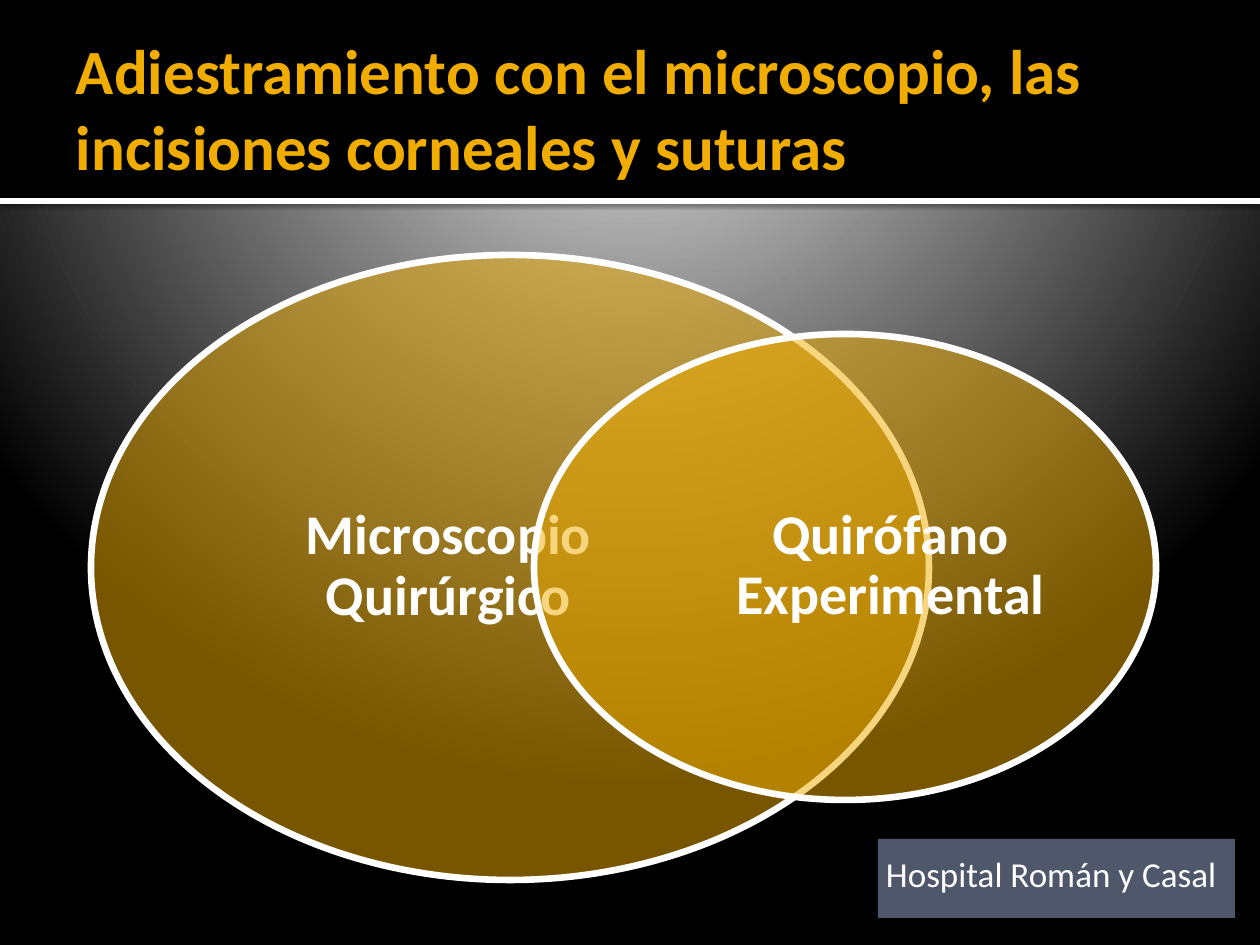
from dataclasses import dataclass

from pptx import Presentation
from pptx.dml.color import RGBColor
from pptx.enum.shapes import MSO_SHAPE as Preset
from pptx.enum.text import MSO_ANCHOR as Anchor, PP_ALIGN as Align
from pptx.oxml import parse_xml
from pptx.oxml.ns import nsdecls
from pptx.util import Emu, Pt

EMU_PER_PX = 914400 / 126
WHITE, BLACK, GOLD, SLATE = "FFFFFF", "000000", "F0AD00", "4F576A"


@dataclass(frozen=True)
class Frame:
    """A rectangle in px."""
    left: int
    top: int
    width: int
    height: int


@dataclass(frozen=True)
class VennSet:
    """An ellipse of the diagram with its label."""
    label: str
    ellipse: Frame
    label_frame: Frame


VENN_SETS = (
    VennSet("Microscopio Quirúrgico", Frame(91, 255, 838, 625), Frame(207, 328, 483, 478)),
    VennSet("Quirófano Experimental", Frame(534, 334, 622, 466), Frame(711, 388, 359, 357)),
)


def px(length: int) -> Emu:
    """Turn px into EMU."""
    return Emu(round(length * EMU_PER_PX))


def place(frame: Frame) -> tuple:
    """Give the frame as left, top, width and height in EMU."""
    return px(frame.left), px(frame.top), px(frame.width), px(frame.height)


def color(value: str) -> RGBColor:
    """Turn a hex string into a colour."""
    return RGBColor.from_string(value)


def write(box, text: str, *, size: int, bold: bool = False, ink: str = WHITE,
          align=Align.LEFT, anchor=Anchor.MIDDLE, margins=(0, 0, 0, 0), spacing=1.0) -> None:
    """Put formatted text into a shape."""
    body = box.text_frame
    body.word_wrap = True
    body.vertical_anchor = anchor
    body.margin_left, body.margin_top, body.margin_right, body.margin_bottom = map(px, margins)
    para = body.paragraphs[0]
    para.alignment = align
    para.line_spacing = spacing
    span = para.add_run()
    span.text = text
    span.font.name = "Calibri"
    span.font.size = Pt(size)
    span.font.bold = bold
    span.font.color.rgb = color(ink)


def add_filled(page, preset, frame: Frame, fill: str):
    """Add a plain filled shape without line or shadow."""
    box = page.shapes.add_shape(preset, *place(frame))
    box.shadow.inherit = False
    box.fill.solid()
    box.fill.fore_color.rgb = color(fill)
    box.line.fill.background()
    return box


def add_venn_set(page, item: VennSet) -> None:
    """Draw a half transparent ellipse and its label."""
    ellipse = add_filled(page, Preset.OVAL, item.ellipse, GOLD)
    tint = ellipse.element.spPr.find(".//{*}srgbClr")
    tint.append(parse_xml(f'<a:alpha {nsdecls("a")} val="50000"/>'))
    ellipse.line.color.rgb = color(WHITE)
    ellipse.line.width = Pt(3.78)
    label = page.shapes.add_textbox(*place(item.label_frame))
    write(label, item.label, size=32, bold=True, align=Align.CENTER, spacing=0.9)


def add_shadow(box) -> None:
    """Give a shape a soft shadow below."""
    effects = box.element.spPr.find("{*}effectLst")
    effects.append(parse_xml(
        f'<a:outerShdw {nsdecls("a")} blurRad="{Pt(2.5)}" dist="{Pt(0.8)}" dir="5400000" '
        f'rotWithShape="0"><a:srgbClr val="{BLACK}"><a:alpha val="60000"/></a:srgbClr>'
        '</a:outerShdw>'))


def set_spotlight(page) -> None:
    """Fill the background with a circular gradient lit from above."""
    stops = ((0, "C0C0C0"), (12, "C0C0C0"), (20, "BEBEBE"), (100, BLACK))
    stop_xml = "".join(f'<a:gs pos="{at * 1000}"><a:srgbClr val="{tone}"/></a:gs>'
                       for at, tone in stops)
    page.background.fill.solid()
    solid = page.element.find(".//{*}bgPr/{*}solidFill")
    solid.getparent().replace(solid, parse_xml(
        f'<a:gradFill {nsdecls("a")} rotWithShape="1"><a:gsLst>{stop_xml}</a:gsLst>'
        '<a:path path="circle"><a:fillToRect l="10000" t="-25000" r="10000" b="125000"/>'
        '</a:path></a:gradFill>'))


def main() -> None:
    """Build the slide and save the deck."""
    deck = Presentation()
    deck.slide_width, deck.slide_height = px(1260), px(945)
    page = deck.slides.add_slide(deck.slide_layouts[5])
    set_spotlight(page)

    add_shadow(add_filled(page, Preset.RECTANGLE, Frame(0, 198, 1260, 6), WHITE))
    header = add_filled(page, Preset.RECTANGLE, Frame(0, 0, 1260, 198), BLACK)

    title = page.shapes.title
    title.left, title.top, title.width, title.height = place(Frame(63, 21, 1134, 173))
    header.element.addnext(title.element)
    write(title, "Adiestramiento con el microscopio, las incisiones corneales y suturas",
          size=36, bold=True, ink=GOLD, margins=(13, 6, 6, 6))

    for item in VENN_SETS:
        add_venn_set(page, item)

    caption = add_filled(page, Preset.RECTANGLE, Frame(878, 839, 357, 79), SLATE)
    write(caption, "Hospital Román y Casal", size=20, anchor=Anchor.TOP, margins=(8, 13, 13, 6))
    deck.save("out.pptx")


if __name__ == "__main__":
    main()
